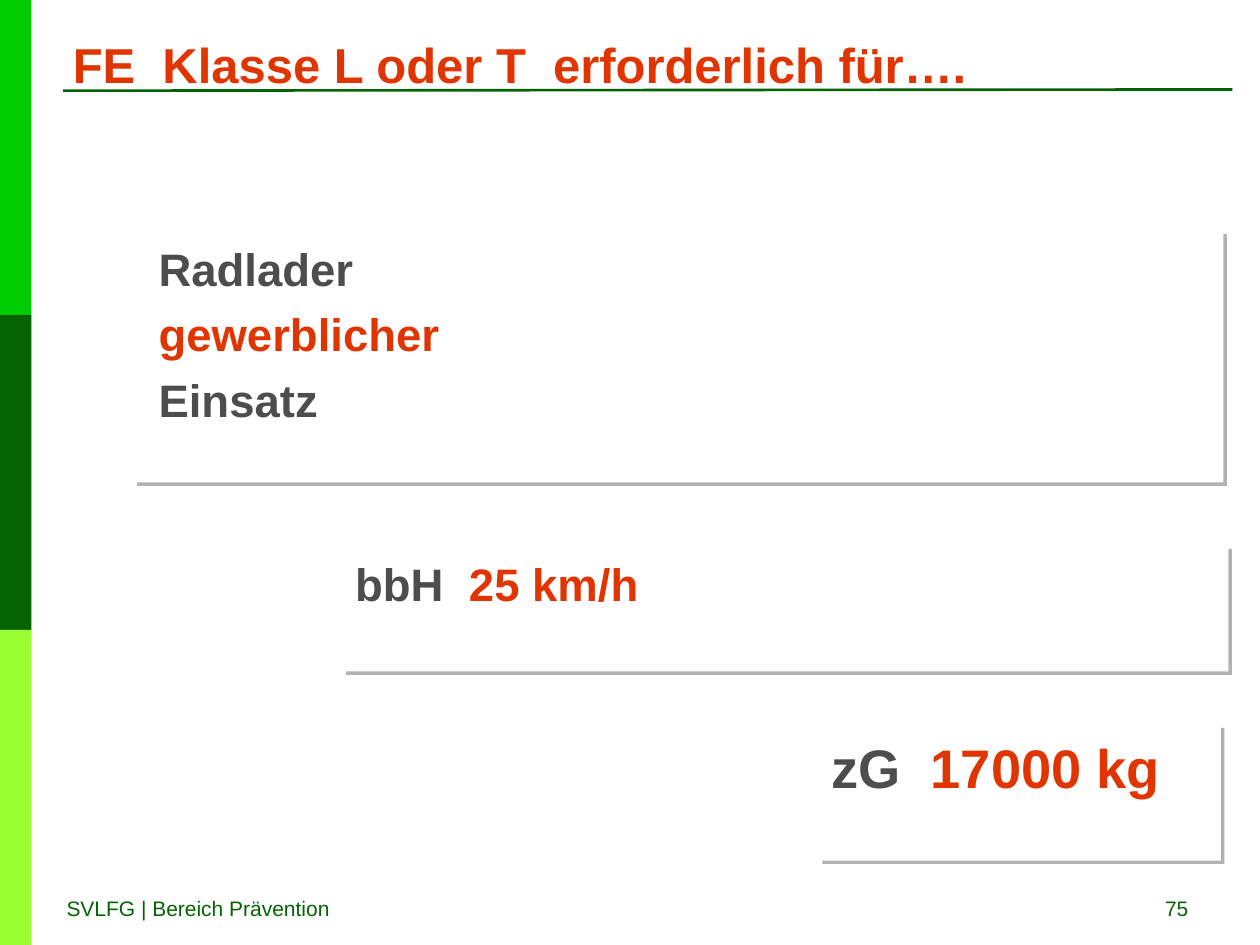
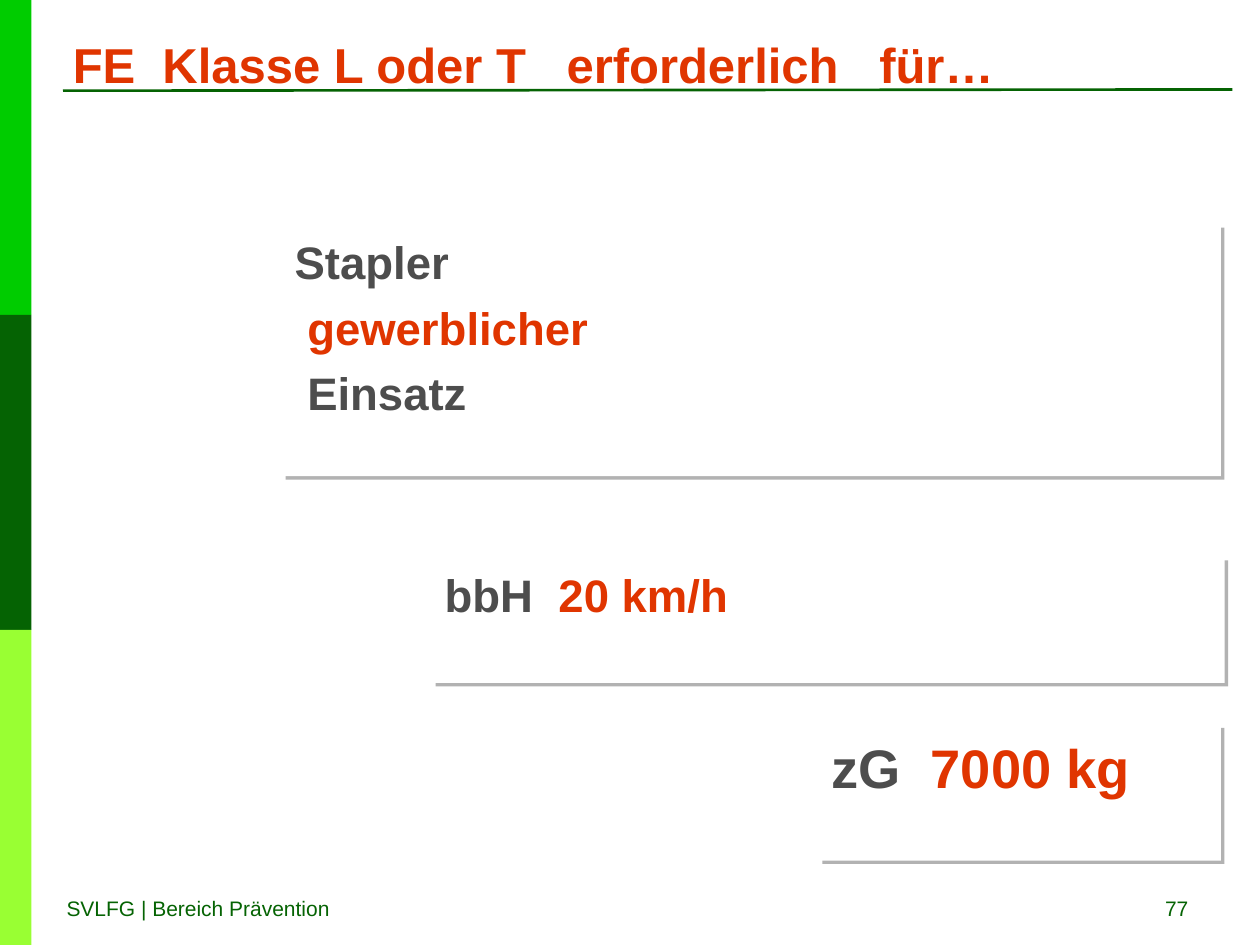
from lxml import etree
from pptx import Presentation
from pptx.dml.color import RGBColor
from pptx.enum.shapes import MSO_CONNECTOR, MSO_SHAPE
from pptx.enum.text import MSO_ANCHOR, PP_ALIGN
from pptx.oxml.ns import qn
from pptx.util import Inches, Pt

RECTANGLE = MSO_SHAPE.RECTANGLE
STRAIGHT = MSO_CONNECTOR.STRAIGHT
TOP, MIDDLE = MSO_ANCHOR.TOP, MSO_ANCHOR.MIDDLE
LEFT, RIGHT = PP_ALIGN.LEFT, PP_ALIGN.RIGHT

FONT = "Arial"
COLORS = {
    "green": "00CC00",
    "dark_green": "056303",
    "lime": "99FF33",
    "red": "E03500",
    "gray": "4D4D4D",
    "shadow": "B2B2B2",
    "white": "FFFFFF",
}
INDENT = 0.1


def rgb(name):
    return RGBColor.from_string(COLORS[name])


class Deck:
    def __init__(self):
        self.presentation = Presentation()
        self.presentation.slide_width = Inches(10)
        self.presentation.slide_height = Inches(7.5)
        self.slide = None

    def new_slide(self, title, number):
        layout = self.presentation.slide_layouts[6]
        self.slide = self.presentation.slides.add_slide(layout)
        for row, color in enumerate(("green", "dark_green", "lime")):
            self.block(0, 2.5 * row, 0.25, 2.5, color)
        self.rule(0.5, 0.72, 9.78, 0.71)
        self.label("SVLFG | Bereich Prävention", 0.43, 7.06, 2.76, 0.3)
        self.label(str(number), 7.2, 7.06, 2.33, 0.33, align=RIGHT)
        self.label(title, 0.48, 0.17, 8.86, 0.67, 28, "red", True, anchor=MIDDLE)

    def block(self, left, top, width, height, color):
        block = self.slide.shapes.add_shape(
            RECTANGLE, Inches(left), Inches(top), Inches(width), Inches(height))
        block.shadow.inherit = False
        block.fill.solid()
        block.fill.fore_color.rgb = rgb(color)
        block.line.fill.background()
        return block

    def rule(self, x1, y1, x2, y2):
        rule = self.slide.shapes.add_connector(
            STRAIGHT, Inches(x1), Inches(y1), Inches(x2), Inches(y2))
        rule.line.color.rgb = rgb("dark_green")
        rule.line.width = Pt(1.5)
        etree.SubElement(rule._element.spPr, qn("a:effectLst"))

    def style(self, paragraph, size, bold, align=LEFT):
        paragraph.alignment = align
        paragraph.font.name = FONT
        paragraph.font.size = Pt(size)
        paragraph.font.bold = bold

    def label(self, text, left, top, width, height, size=12,
              color="dark_green", bold=False, align=LEFT, anchor=TOP):
        frame = self.slide.shapes.add_textbox(
            Inches(left), Inches(top), Inches(width), Inches(height)).text_frame
        frame.word_wrap = True
        frame.vertical_anchor = anchor
        paragraph = frame.paragraphs[0]
        paragraph.text = text
        self.style(paragraph, size, bold, align)
        paragraph.font.color.rgb = rgb(color)

    def panel(self, left, top, width, height, lines, size=26):
        panel = self.block(left, top, width, height, "white")
        self.drop_shadow(panel)
        frame = panel.text_frame
        frame.word_wrap = True
        frame.vertical_anchor = TOP
        frame.margin_top = Inches(0.08)
        for index, (indent, runs) in enumerate(lines):
            paragraph = frame.paragraphs[0] if index == 0 else frame.add_paragraph()
            paragraph._p.get_or_add_pPr().set("marL", str(Inches(indent)))
            self.style(paragraph, size, True)
            if index:
                paragraph.space_before = Pt(6.3)
            for text, color in runs:
                run = paragraph.add_run()
                run.text = text
                run.font.color.rgb = rgb(color)

    def drop_shadow(self, shape):
        effects = shape._element.spPr.find(qn("a:effectLst"))
        shadow = etree.SubElement(
            effects, qn("a:outerShdw"), dist=str(Pt(2.8)), dir="2700000",
            algn="ctr", rotWithShape="0")
        etree.SubElement(shadow, qn("a:srgbClr"), val=COLORS["shadow"])

    def requirement(self, title, number, vehicle, vehicle_indent, vehicle_box,
                    speed, speed_box, weight):
        self.new_slide(title, number)
        self.panel(*vehicle_box, [
            (vehicle_indent, [(vehicle, "gray")]),
            (INDENT, [("gewerblicher", "red")]),
            (INDENT, [("Einsatz", "gray")]),
        ])
        self.panel(*speed_box, [(0, [("bbH  ", "gray"), (speed, "red")])])
        self.panel(6.5, 5.75, 3.19, 1.08,
                   [(0, [("zG  ", "gray"), (weight, "red")])], size=31)


def main():
    deck = Deck()
    deck.requirement(
        "FE  Klasse L oder T  erforderlich für….", 75,
        "Radlader", INDENT, (1.06, 1.83, 8.65, 2),
        "25 km/h", (2.72, 4.33, 7.03, 1), "17000 kg")
    deck.requirement(
        "FE  Klasse L oder T   erforderlich   für…", 77,
        "Stapler", 0, (2.24, 1.78, 7.45, 2),
        "20 km/h", (3.43, 4.42, 6.29, 1), "7000 kg")
    deck.presentation.save("out.pptx")


if __name__ == "__main__":
    main()
